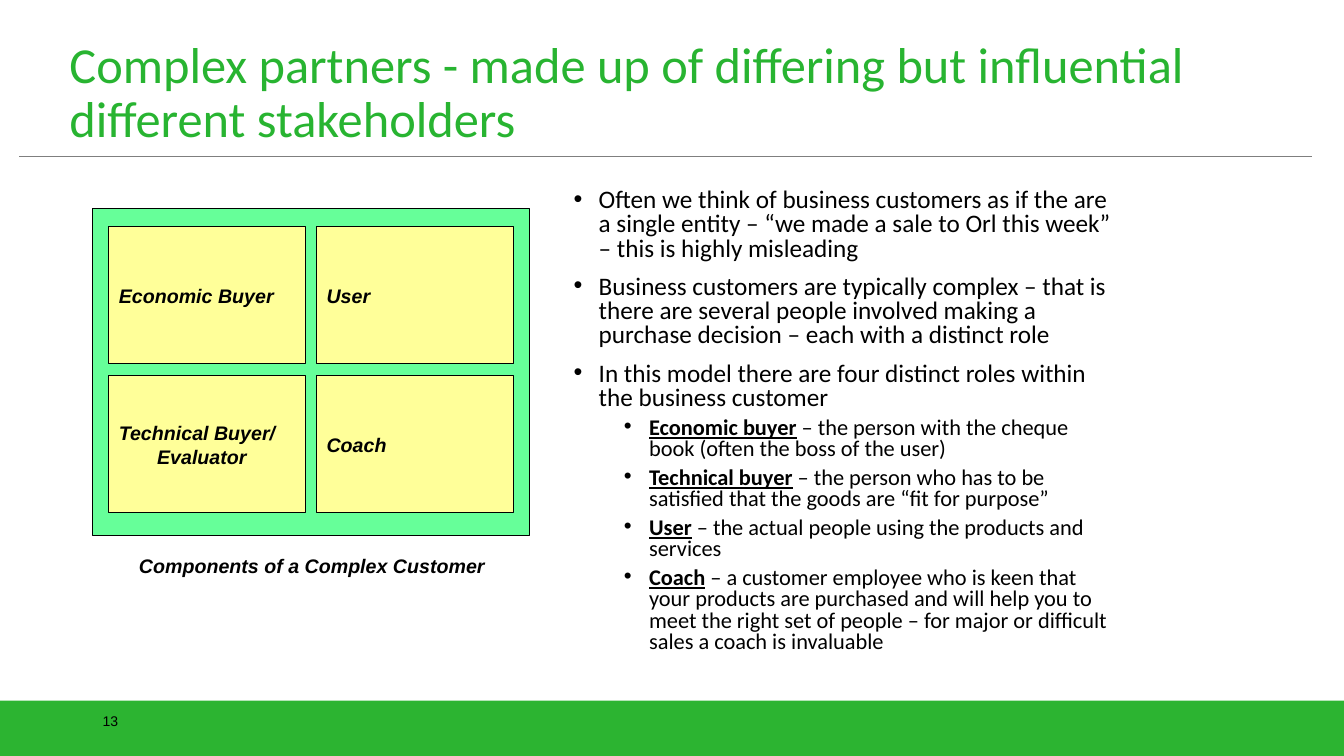
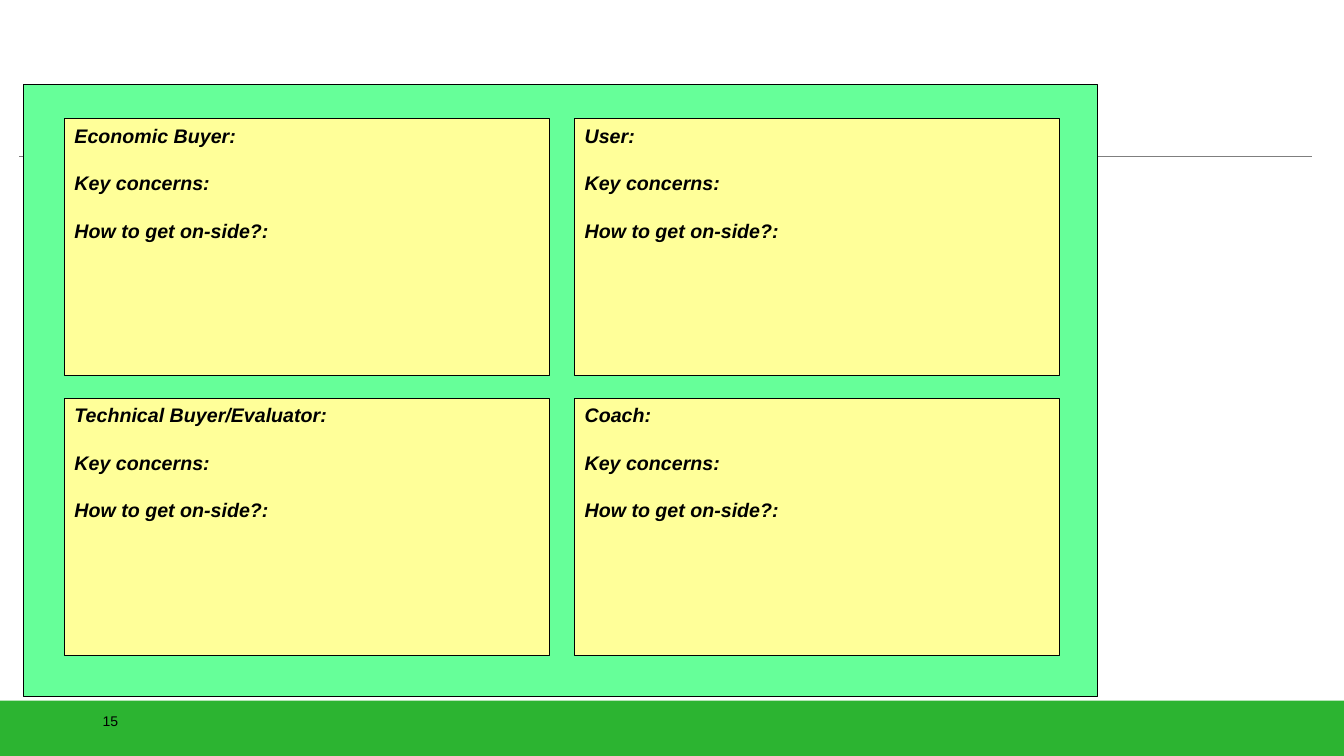
import pptx
import pptx.util
import pptx.dml.color
import pptx.enum.shapes
import pptx.enum.text
import pptx.oxml.ns
from lxml import etree

Inches, Pt = pptx.util.Inches, pptx.util.Pt
Anchor = pptx.enum.text.MSO_ANCHOR

COLORS = {
    "band": "2CB431", "title": "28B431", "rule": "7F7F7F",
    "panel": "66FF99", "cell": "FFFF99", "text": "000000",
}
SLIDE_W, SLIDE_H = 13.33, 7.5
BAND_TOP = 6.95

TITLE = "Complex partners - made up of differing but influential different stakeholders"
POINTS = [
    "Often we think of business customers as if the are a single entity – "
    "“we made a sale to Orl this week” – this is highly misleading",
    "Business customers are typically complex – that is there are several people "
    "involved making a purchase decision – each with a distinct role",
    "In this model there are four distinct roles within the business customer",
]
ROLES = [
    ("Economic buyer", " – the person with the cheque book (often the boss of the user)"),
    ("Technical buyer", " – the person who has to be satisfied that the goods are “fit for purpose”"),
    ("User", " – the actual people using the products and services"),
    ("Coach", " – a customer employee who is keen that your products are purchased and will "
              "help you to meet the right set of people – for major or difficult sales a "
              "coach is invaluable"),
]
COMPONENTS = ["Economic Buyer", "User", "Technical Buyer/ Evaluator", "Coach"]
CAPTION = "Components of a Complex Customer"
WORKSHEET = ["Economic Buyer:", "User:", "Technical Buyer/Evaluator:", "Coach:"]
PROMPTS = ["Key concerns:", "How to get on-side?:"]


def rgb(name):
    return pptx.dml.color.RGBColor.from_string(COLORS[name])


def add_run(paragraph, text, size, face="Calibri", color="text", bold=False,
            italic=False, underline=False):
    run = paragraph.add_run()
    run.text = text
    font = run.font
    font.name, font.size = face, Pt(size)
    font.bold, font.italic, font.underline = bold, italic, underline
    font.color.rgb = rgb(color)


def set_indent(paragraph, left, hang, bullet=None):
    props = paragraph._p.get_or_add_pPr()
    props.set("marL", str(Inches(left)))
    props.set("indent", str(-Inches(hang)))
    if bullet:
        qn = pptx.oxml.ns.qn
        etree.SubElement(props, qn("a:buFont")).set("typeface", "Arial")
        etree.SubElement(props, qn("a:buChar")).set("char", bullet)


def add_text(slide, left, top, width, height, anchor=Anchor.TOP, wrap=True):
    frame = slide.shapes.add_textbox(*map(Inches, (left, top, width, height))).text_frame
    frame.word_wrap = wrap
    frame.vertical_anchor = anchor
    return frame


def add_rect(slide, box, fill, outlined=True):
    rect = slide.shapes.add_shape(pptx.enum.shapes.MSO_SHAPE.RECTANGLE, *map(Inches, box))
    rect.shadow.inherit = False
    rect.fill.solid()
    rect.fill.fore_color.rgb = rgb(fill)
    if outlined:
        rect.line.color.rgb = rgb("text")
        rect.line.width = Pt(0.75)
    else:
        rect.line.fill.background()
    return rect


def next_paragraph(frame, index):
    return frame.add_paragraph() if index else frame.paragraphs[0]


def write_labels(frame, labels, gap=0):
    """Bold italic labels with a hanging indent, gap points apart."""
    for index, label in enumerate(labels):
        paragraph = next_paragraph(frame, index)
        paragraph.alignment = pptx.enum.text.PP_ALIGN.LEFT
        set_indent(paragraph, 0.38, 0.38)
        if index:
            paragraph.space_before = Pt(gap)
        add_run(paragraph, label, 14, "Arial", bold=True, italic=True)


def add_matrix(slide, panel, first_cell, gaps, cells, anchor):
    """Two-by-two cells on a green panel, each holding a list of labels."""
    add_rect(slide, panel, "panel")
    left, top, width, height = first_cell
    for index, labels in enumerate(cells):
        row, column = divmod(index, 2)
        cell = add_rect(slide, (left + column * (width + gaps[0]),
                                top + row * (height + gaps[1]), width, height), "cell")
        cell.text_frame.word_wrap = True
        cell.text_frame.vertical_anchor = anchor
        write_labels(cell.text_frame, labels, gap=17)


def start_slide(deck, number):
    """Blank slide with the footer band, title rule and page number."""
    slide = deck.slides.add_slide(deck.slide_layouts[6])
    add_rect(slide, (0, BAND_TOP, SLIDE_W, SLIDE_H - BAND_TOP), "band", outlined=False)
    rule = slide.shapes.add_connector(pptx.enum.shapes.MSO_CONNECTOR.STRAIGHT,
                                      *map(Inches, (0.19, 1.55, 13.01, 1.55)))
    rule.line.color.rgb = rgb("rule")
    rule.line.width = Pt(0.75)
    etree.SubElement(rule._element.spPr, pptx.oxml.ns.qn("a:effectLst"))
    page = add_text(slide, 0.92, BAND_TOP, 3, 0.4, Anchor.MIDDLE)
    add_run(page.paragraphs[0], str(number), 10, "Arial")
    return slide


def build_overview(deck):
    slide = start_slide(deck, 13)
    title = add_text(slide, 0.59, 0.21, 11.5, 1.45, Anchor.MIDDLE).paragraphs[0]
    title.line_spacing = 0.9
    add_run(title, TITLE, 36, color="title")

    body = add_text(slide, 5.59, 1.83, 5.57, 4.95)
    for index, item in enumerate(POINTS + ROLES):
        is_role = isinstance(item, tuple)
        paragraph = next_paragraph(body, index)
        set_indent(paragraph, 0.75 if is_role else 0.25, 0.25, "•")
        paragraph.line_spacing = 0.8
        if index:
            paragraph.space_before = Pt(5 if is_role else 10)
        if is_role:
            role, description = item
            add_run(paragraph, role, 16, bold=True, underline=True)
            add_run(paragraph, description, 16)
        else:
            add_run(paragraph, item, 18)

    add_matrix(slide, (0.92, 2.07, 4.33, 3.24), (1.08, 2.25, 1.95, 1.36), (0.11, 0.12),
               [[name] for name in COMPONENTS], Anchor.MIDDLE)
    write_labels(add_text(slide, 1.28, 5.45, 3.65, 0.34, wrap=False), [CAPTION])


def build_worksheet(deck):
    slide = start_slide(deck, 15)
    add_matrix(slide, (0.23, 0.84, 10.66, 6.07), (0.64, 1.18, 4.81, 2.55), (0.25, 0.22),
               [[name] + PROMPTS for name in WORKSHEET], Anchor.TOP)


def main():
    deck = pptx.Presentation()
    deck.slide_width, deck.slide_height = Inches(SLIDE_W), Inches(SLIDE_H)
    build_overview(deck)
    build_worksheet(deck)
    deck.save("out.pptx")


if __name__ == "__main__":
    main()
